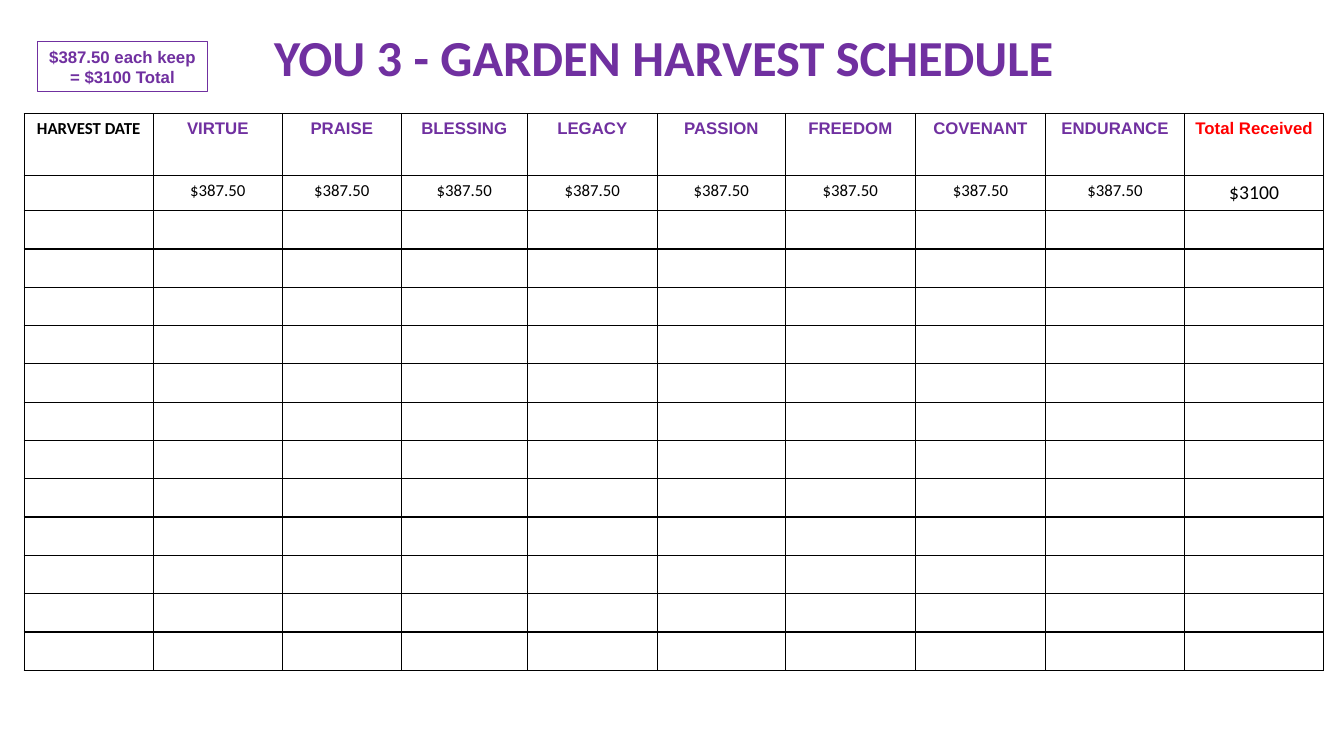
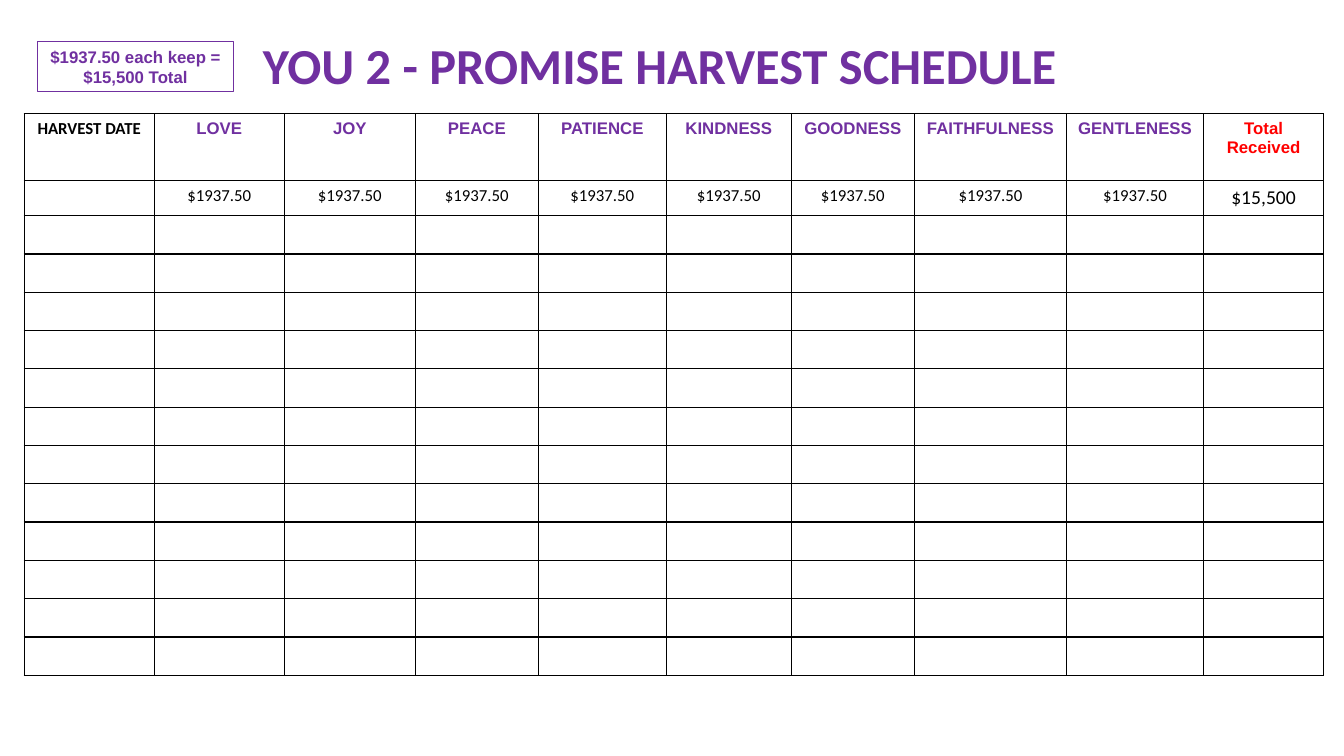
from dataclasses import dataclass

from lxml import etree
from pptx import Presentation
from pptx.dml.color import RGBColor
from pptx.enum import shapes, text
from pptx.oxml.ns import qn
from pptx.util import Inches, Pt


@dataclass(frozen=True)
class Theme:
    purple: str = "7030A0"
    red: str = "FF0000"
    black: str = "000000"
    head_font: str = "Arial"
    body_font: str = "Calibri"
    title_size: int = 36
    total_size: int = 14
    body_size: int = 12


T = Theme()
ROWS = 14
ROW_H = 0.38

schedules = [
    dict(
        title="YOU 3 - GARDEN HARVEST SCHEDULE",
        title_box=(2.13, 0.21, 8.91, 0.71),
        keep="$387.50 each keep = $3100 Total",
        keep_width=1.69,
        names=["VIRTUE", "PRAISE", "BLESSING", "LEGACY", "PASSION",
               "FREEDOM", "COVENANT", "ENDURANCE"],
        amount="$387.50",
        total="$3100",
        cols=[1.28, 1.28, 1.18, 1.25, 1.29, 1.27, 1.29, 1.29, 1.38, 1.38],
        head_height=0.61,
    ),
    dict(
        title="YOU 2 - PROMISE HARVEST SCHEDULE",
        title_box=(2.22, 0.29, 8.65, 0.71),
        keep="$1937.50 each keep = $15,500 Total",
        keep_width=1.95,
        names=["LOVE", "JOY", "PEACE", "PATIENCE", "KINDNESS",
               "GOODNESS", "FAITHFULNESS", "GENTLENESS"],
        amount="$1937.50",
        total="$15,500",
        cols=[1.29, 1.29, 1.3, 1.22, 1.27, 1.24, 1.22, 1.51, 1.36, 1.19],
        head_height=0.66,
    ),
]


def write(tf, words, size=T.body_size, font=T.body_font, color=T.black, bold=False):
    tf.word_wrap = True
    p = tf.paragraphs[0]
    p.alignment = text.PP_ALIGN.CENTER
    r = p.add_run()
    r.text = words
    r.font.size = Pt(size)
    r.font.name = font
    r.font.bold = bold
    r.font.color.rgb = RGBColor.from_string(color)


def outline(cell):
    tcPr = cell._tc.get_or_add_tcPr()
    for side in ("lnL", "lnR", "lnT", "lnB"):
        ln = etree.SubElement(tcPr, qn(f"a:{side}"), w=str(Pt(1)))
        fill = etree.SubElement(ln, qn("a:solidFill"))
        etree.SubElement(fill, qn("a:srgbClr"), val=T.black)
    cell.fill.background()


prs = Presentation()
prs.slide_width = Inches(13.33)
prs.slide_height = Inches(7.5)

for plan in schedules:
    s = prs.slides.add_slide(prs.slide_layouts[5])

    title = s.shapes.title
    title.left, title.top, title.width, title.height = map(Inches, plan["title_box"])
    title.text_frame.auto_size = text.MSO_AUTO_SIZE.NONE
    title.text_frame.vertical_anchor = text.MSO_ANCHOR.TOP
    write(title.text_frame, plan["title"], size=T.title_size, color=T.purple, bold=True)

    heights = [plan["head_height"], 0.35] + [ROW_H] * (ROWS - 2)
    cols = plan["cols"]
    table = s.shapes.add_table(ROWS, len(cols), Inches(0.24), Inches(1.13),
                               Inches(sum(cols)), Inches(sum(heights))).table
    table.first_row = False
    table.horz_banding = False
    for col, width in zip(table.columns, cols):
        col.width = Inches(width)
    for row, height in zip(table.rows, heights):
        row.height = Inches(height)

    for cell in table.iter_cells():
        outline(cell)

    write(table.cell(0, 0).text_frame, "HARVEST DATE", bold=True)
    for i, name in enumerate(plan["names"], 1):
        write(table.cell(0, i).text_frame, name, font=T.head_font, color=T.purple, bold=True)
        write(table.cell(1, i).text_frame, plan["amount"])
    last = len(cols) - 1
    write(table.cell(0, last).text_frame, "Total Received",
          font=T.head_font, color=T.red, bold=True)
    write(table.cell(1, last).text_frame, plan["total"], size=T.total_size)

    for cell in table.iter_cells():
        if not cell.text:
            p = cell.text_frame.paragraphs[0]
            etree.SubElement(p._p, qn("a:endParaRPr"), sz=str(T.body_size * 100))

    sp = s.shapes.add_shape(shapes.MSO_SHAPE.RECTANGLE, Inches(0.37), Inches(0.41),
                            Inches(plan["keep_width"]), Inches(0.5))
    sp.shadow.inherit = False
    sp.fill.background()
    sp.line.color.rgb = RGBColor.from_string(T.purple)
    sp.line.width = Pt(0.75)
    sp.text_frame.vertical_anchor = text.MSO_ANCHOR.MIDDLE
    write(sp.text_frame, plan["keep"], font=T.head_font, color=T.purple, bold=True)

prs.save("out.pptx")
